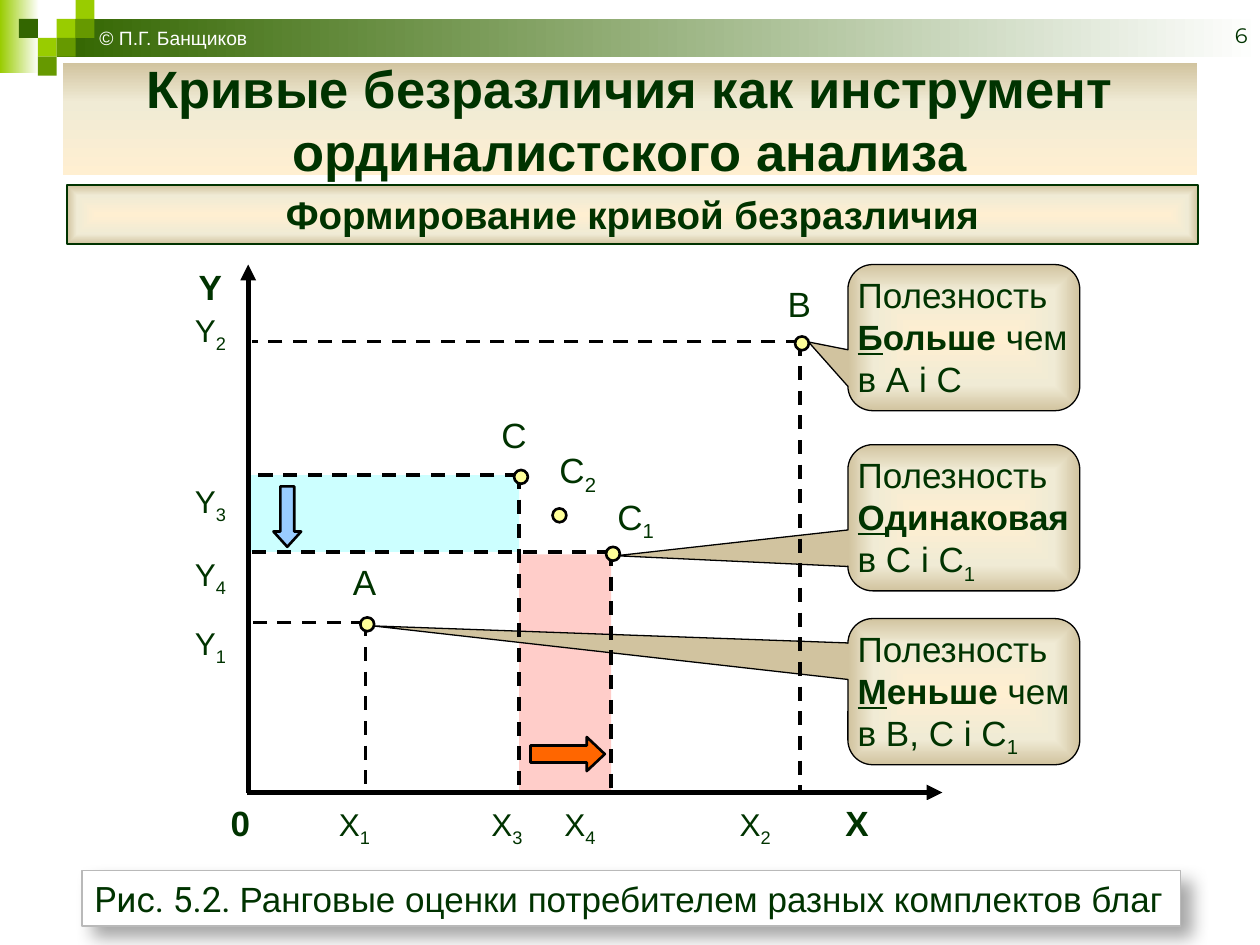
from pptx import Presentation
from pptx.dml.color import RGBColor
from pptx.enum.dml import MSO_LINE_DASH_STYLE as Dash
from pptx.enum.shapes import MSO_CONNECTOR as Connector, MSO_SHAPE as Shape
from pptx.enum.text import MSO_ANCHOR as Anchor, PP_ALIGN as Align
from pptx.oxml import parse_xml
from pptx.oxml.ns import nsdecls, qn
from pptx.util import Inches, Pt

INK = RGBColor(0x00, 0x33, 0x00)
BLACK = RGBColor(0x00, 0x00, 0x00)
WHITE = RGBColor(0xFF, 0xFF, 0xFF)
LIME = RGBColor(0x99, 0xCC, 0x00)
GREEN = RGBColor(0x66, 0x99, 0x00)
FOREST = RGBColor(0x33, 0x66, 0x00)
PINK = RGBColor(0xFF, 0xCD, 0xC9)
AQUA = RGBColor(0xCC, 0xFF, 0xFF)
SKY = RGBColor(0x99, 0xCC, 0xFF)
ORANGE = RGBColor(0xFF, 0x66, 0x00)
CREAM = RGBColor(0xFF, 0xFF, 0x99)
GREY = RGBColor(0xB9, 0xB9, 0xB9)
PARCHMENT = [(0, RGBColor(0xFF, 0xEF, 0xD1)), (65, RGBColor(0xF0, 0xEB, 0xD5)),
             (100, RGBColor(0xD1, 0xC3, 0x9F))]
TIGHT = (0.2, 0.1)
FROM_CENTRE = ('<a:path path="rect"><a:fillToRect l="50000" t="50000" '
               'r="50000" b="50000"/></a:path>')
UPWARD = '<a:lin ang="16200000" scaled="1"/>'
RIGHTWARD = '<a:lin ang="0" scaled="1"/>'


def element(tag, body="", attributes=""):
    return parse_xml(f'<a:{tag} {nsdecls("a")} {attributes}>{body}</a:{tag}>')


def indexed(label):
    """Split a label such as X1 into its letter and a lowered index."""
    return [(label[0], "")] + [(digit, "sub") for digit in label[1:]]


class Painter:
    """Draws on one slide; lengths are cells of a grid 100 columns wide, 75 rows high."""

    def __init__(self, slide, cell, font="Arial", colour=INK):
        self.shapes = slide.shapes
        self.cell = cell
        self.font = font
        self.colour = colour

    def cells(self, *lengths):
        return [round(length * self.cell) for length in lengths]

    def shape(self, kind, place, fill, line=None, adjustments=()):
        """Add a preset shape; line is (colour, points)."""
        box = self.shapes.add_shape(kind, *self.cells(*place))
        box.shadow.inherit = False
        for index, value in enumerate(adjustments):
            box.adjustments[index] = value
        if isinstance(fill, RGBColor):
            box.fill.solid()
            box.fill.fore_color.rgb = fill
        else:
            self.gradient(box, *fill)
        if line:
            box.line.color.rgb, box.line.width = line[0], Pt(line[1])
        else:
            box.line.fill.background()
        return box

    def gradient(self, box, stops, direction):
        box.fill.gradient()
        grad = box._element.spPr.find(qn("a:gradFill"))
        for child in list(grad):
            grad.remove(child)
        marks = "".join(f'<a:gs pos="{share * 1000}"><a:srgbClr val="{colour}"/></a:gs>'
                        for share, colour in stops)
        grad.append(element("gsLst", marks))
        grad.append(parse_xml(direction.replace(" ", f' {nsdecls("a")} ', 1)))

    def text_box(self, place, paragraphs, size, **options):
        box = self.shapes.add_textbox(*self.cells(*place))
        return self.set_text(box, paragraphs, size, **options)

    def set_text(self, box, paragraphs, size, align=Align.LEFT, anchor=Anchor.TOP,
                 insets=(1, 0.5), colour=None, font=None):
        """Fill a box with paragraphs, each a list of (text, marks, optional size or font)."""
        frame = box.text_frame
        frame.word_wrap = True
        frame.vertical_anchor = anchor
        frame.margin_left = frame.margin_right = self.cells(insets[0])[0]
        frame.margin_top = frame.margin_bottom = self.cells(insets[1])[0]
        for number, spans in enumerate(paragraphs):
            para = frame.add_paragraph() if number else frame.paragraphs[0]
            para.alignment = align
            for text, marks, *special in spans:
                span = para.add_run()
                span.text = text
                style = span.font
                style.name, style.size = font or self.font, Pt(size)
                style.color.rgb = colour or self.colour
                style.bold = "bold" in marks
                style.underline = "under" in marks
                if "sub" in marks:
                    style._element.set("baseline", "-25000")
                for value in special:
                    if isinstance(value, str):
                        style.name = value
                    else:
                        style.size = Pt(value)
        return box

    def label(self, place, text):
        box = self.shape(Shape.RECTANGLE, place, WHITE)
        self.set_text(box, [indexed(text)], 20, insets=TIGHT)

    def callout(self, place, tip, spans):
        box = self.shape(Shape.ROUNDED_RECTANGULAR_CALLOUT, place, (PARCHMENT, FROM_CENTRE),
                         (BLACK, 0.75), (*tip, 0.17))
        self.set_text(box, [spans], 20, insets=TIGHT)

    def line(self, start, end, width, dashed=False, arrow=False):
        line = self.shapes.add_connector(Connector.STRAIGHT, *self.cells(*start, *end))
        line.line.color.rgb, line.line.width = BLACK, Pt(width)
        if dashed:
            line.line.dash_style = Dash.DASH
        if arrow:
            line.line._get_or_add_ln().append(element("tailEnd", "", 'type="triangle"'))
        line._element.spPr.append(element("effectLst"))

    def point(self, x, y):
        size = 1.1
        self.shape(Shape.OVAL, (x - size / 2, y - size / 2, size, size), CREAM, (BLACK, 1.5))


def draw_header(painter):
    painter.shape(Shape.RECTANGLE, (0, 0, 3.1, 5.8), ([(0, LIME), (100, WHITE)], RIGHTWARD))
    painter.shape(Shape.RECTANGLE, (4.5, 1.5, 95.5, 3),
                  ([(0, FOREST), (100, WHITE)], RIGHTWARD))
    tile = 1.5
    for column, row, colour in [(3, 1, LIME), (4, 0, LIME), (4, 1, GREEN), (2, 2, LIME),
                                (1, 1, FOREST), (3, 2, GREEN), (2, 3, GREEN)]:
        painter.shape(Shape.RECTANGLE, (column * tile, row * tile, tile, tile), colour)
    painter.text_box((93.8, 1.6, 6.2, 2.7), [[("6", "")]], 12, align=Align.RIGHT,
                     anchor=Anchor.BOTTOM, font="Montserrat")
    title = painter.shape(Shape.RECTANGLE, (5, 5, 90, 8.9), (PARCHMENT, UPWARD))
    painter.set_text(title, [[("Кривые безразличия как инструмент ординалистского анализа",
                               "bold")]], 30, align=Align.CENTER, anchor=Anchor.MIDDLE)
    painter.text_box((6.9, 1.6, 14.8, 2.9), [[("© П.Г. Банщиков", "")]], 11, colour=WHITE)
    subtitle = painter.shape(Shape.RECTANGLE, (5.3, 14.7, 89.8, 4.7),
                             (PARCHMENT, FROM_CENTRE), (INK, 1))
    painter.set_text(subtitle, [[("Формирование кривой безразличия", "bold")]], 22,
                     align=Align.CENTER)


def draw_chart(painter):
    left, bottom = 19.8, 62.9
    points = {"А": (29, 49.4), "В": (63.5, 27.1), "С": (41.2, 37.7), "С1": (48.5, 43.8)}
    (c_x, c_y), (c1_x, c1_y) = points["С"], points["С1"]
    painter.shape(Shape.RECTANGLE, (c_x, c1_y + 0.2, c1_x - c_x, bottom - c1_y), PINK)
    painter.shape(Shape.RECTANGLE, (left, c_y, c_x - left, c1_y - c_y), AQUA)

    callouts = [
        (21, (-0.67, 0.03), "Б", "ольше ", "чем в А і С", ""),
        (35.3, (-1.5, 0.26), "О", "динаковая ", "в С і С", "1"),
        (49.1, (-2.55, -0.45), "М", "еньше ", "чем в В, С і С", "1"),
    ]
    for top, tip, initial, rest, ending, index in callouts:
        spans = [("Полезность ", ""), (initial, "bold under"), (rest, "bold"), (ending, "")]
        if index:
            spans.append((index, "sub"))
        painter.callout((67.3, top, 18.4, 11.6), tip, spans)

    painter.line((19.7, bottom), (19.7, 21), 3, arrow=True)
    painter.line((19.6, bottom), (74.8, bottom), 3, arrow=True)
    for x, y in points.values():
        painter.line((x, y), (left + 0.2, y), 2, dashed=True)
        painter.line((x, y), (x, bottom), 2, dashed=True)
        painter.point(x + 0.15, y + 0.15)
    painter.point(44.4, 40.9)

    for text, place in [("А", (27.8, 44.4, 3.9, 3.9)), ("В", (62.3, 22.3, 3.9, 3.9)),
                        ("С", (39.6, 32.7, 3.9, 3.8)), ("С1", (48.8, 39.2, 5, 3.8)),
                        ("С2", (44.2, 35.5, 4.7, 4.2))]:
        painter.label(place, text)

    painter.shape(Shape.DOWN_ARROW, (21.7, 38.6, 2.2, 4.8), SKY, (BLACK, 1.5), (0.5, 0.55))
    painter.shape(Shape.RIGHT_ARROW, (42.1, 58.5, 5.9, 2.7), ORANGE, (BLACK, 1.5), (0.5, 0.53))
    draw_axis_labels(painter)


def draw_axis_labels(painter):
    spans = [("0", "bold", 20)]
    for name in ["X1", "X3", "X4", "X2"]:
        (letter, marks), index = indexed(name)
        spans += [("\t" + letter, marks), index]
    spans.append(("\tX", "bold", 20))
    row = painter.shape(Shape.RECTANGLE, (18.1, 63.5, 59.7, 4.2), WHITE)
    painter.set_text(row, [spans], 18, insets=TIGHT)
    stops = "".join(f'<a:tab pos="{Inches(stop)}" algn="l"/>'
                    for stop in (0.86, 2.07, 2.65, 4.04, 4.88))
    row.text_frame.paragraphs[0]._p.get_or_add_pPr().append(element("tabLst", stops))

    column = painter.text_box((14.2, 21, 5, 30.6),
                              [[("Y", "bold", 20)]] + [indexed(f"Y{n}") for n in (2, 3, 4, 1)],
                              18, align=Align.CENTER, insets=TIGHT)
    for para, gap in zip(column.text_frame.paragraphs, (0, 2, 73, 17, 15)):
        para.space_before = Pt(gap)


def draw_caption(painter):
    caption = painter.shape(Shape.RECTANGLE, (6.5, 69.1, 87.2, 4.4), WHITE, (GREY, 0.75))
    painter.set_text(caption, [[("Рис. 5.2. ", "", "Roboto"),
                                ("Ранговые оценки потребителем разных комплектов благ", "")]],
                     20, anchor=Anchor.MIDDLE)
    shadow = (f'<a:outerShdw blurRad="{Pt(10.2)}" dist="{Pt(8)}" dir="2700000" algn="tl" '
              'rotWithShape="0"><a:srgbClr val="000000"><a:alpha val="35000"/></a:srgbClr>'
              '</a:outerShdw>')
    effects = caption._element.spPr.find(qn("a:effectLst"))
    effects.getparent().replace(effects, element("effectLst", shadow))


def main():
    deck = Presentation()
    deck.slide_width, deck.slide_height = Inches(10), Inches(7.5)
    page = deck.slides.add_slide(deck.slide_layouts[6])
    painter = Painter(page, deck.slide_width / 100)
    draw_header(painter)
    draw_chart(painter)
    draw_caption(painter)
    deck.save("out.pptx")


if __name__ == "__main__":
    main()
